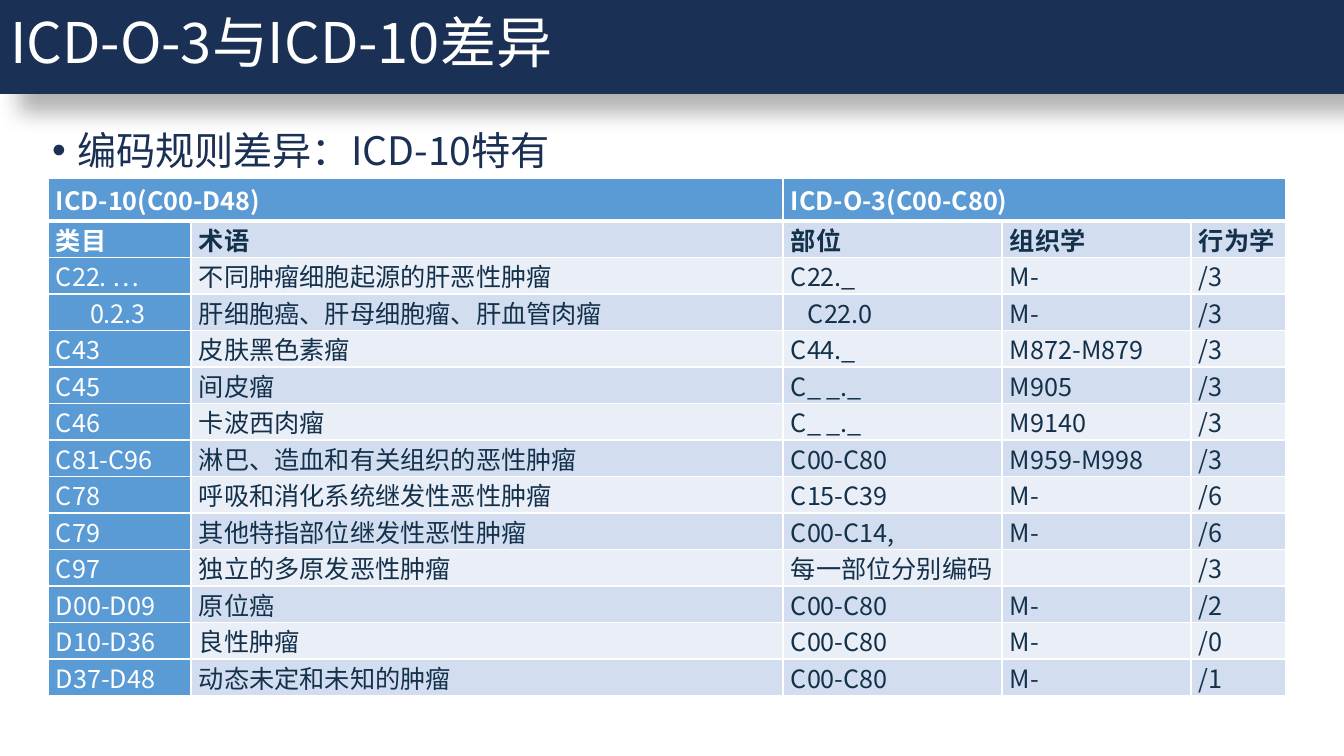
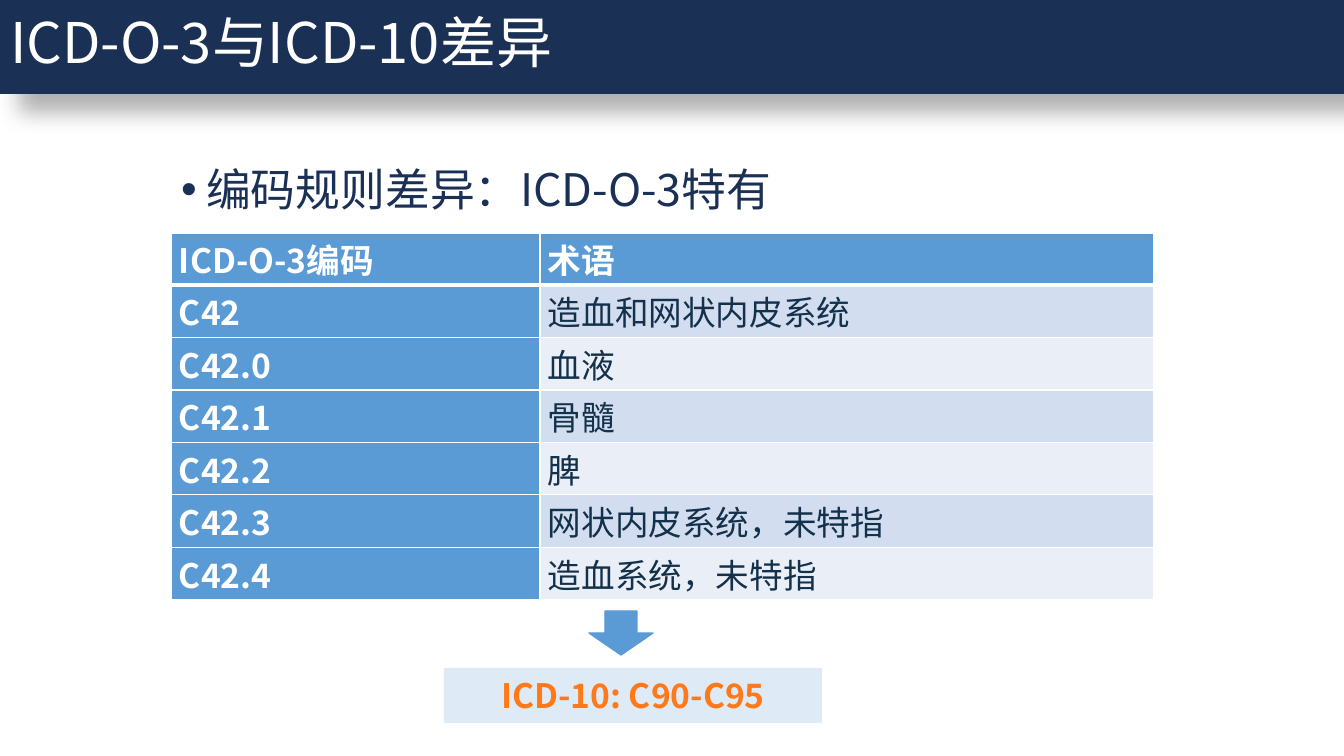
import lxml.etree
import pptx
import pptx.dml.color
import pptx.enum.shapes
import pptx.enum.text
import pptx.oxml
import pptx.oxml.ns
import pptx.util

FONT = "Noto Sans CJK SC"
NAVY = "1B3055"
INK = "14314C"
WHITE = "FFFFFF"
BLUE = "5B9BD5"
PALE_BLUE = "DEEBF7"
ORANGE = "FF7919"
BANDS = ("D2DEEF", "EAEFF7")
SLIDE_WIDTH, SLIDE_HEIGHT = 1344, 756
TITLE = "ICD-O-3与ICD-10差异"

ICD_10_HEADER = (("ICD-10(C00-D48)", 2), ("ICD-O-3(C00-C80)", 3))
ICD_10_ROWS = (
    ("类目", "术语", "部位", "组织学", "行为学"),
    ("C22. …", "不同肿瘤细胞起源的肝恶性肿瘤", "C22._", "M-", "/3"),
    ("0.2.3", "肝细胞癌、肝母细胞瘤、肝血管肉瘤", "C22.0", "M-", "/3"),
    ("C43", "皮肤黑色素瘤", "C44._", "M872-M879", "/3"),
    ("C45", "间皮瘤", "C_ _._", "M905", "/3"),
    ("C46", "卡波西肉瘤", "C_ _._", "M9140", "/3"),
    ("C81-C96", "淋巴、造血和有关组织的恶性肿瘤", "C00-C80", "M959-M998", "/3"),
    ("C78", "呼吸和消化系统继发性恶性肿瘤", "C15-C39", "M-", "/6"),
    ("C79", "其他特指部位继发性恶性肿瘤", "C00-C14,", "M-", "/6"),
    ("C97", "独立的多原发恶性肿瘤", "每一部位分别编码", "", "/3"),
    ("D00-D09", "原位癌", "C00-C80", "M-", "/2"),
    ("D10-D36", "良性肿瘤", "C00-C80", "M-", "/0"),
    ("D37-D48", "动态未定和未知的肿瘤", "C00-C80", "M-", "/1"),
)
ICD_10_INDENTS = {"0.2.3": 34, "C22.0": 17}

ICD_O_HEADER = (("ICD-O-3编码", 1), ("术语", 1))
ICD_O_ROWS = (
    ("C42", "造血和网状内皮系统"),
    ("C42.0", "血液"),
    ("C42.1", "骨髓"),
    ("C42.2", "脾"),
    ("C42.3", "网状内皮系统，未特指"),
    ("C42.4", "造血系统，未特指"),
)


def px(length):
    return pptx.util.Emu(round(length * 914400 / 100.8))


def rgb(color):
    return pptx.dml.color.RGBColor.from_string(color)


def fill_solid(target, color):
    target.fill.solid()
    target.fill.fore_color.rgb = rgb(color)


def place(shape, box):
    shape.left, shape.top, shape.width, shape.height = map(px, box)


def write_text(frame, text, size, color, bold=False, align="LEFT",
               anchor="MIDDLE", line_spacing=1.0, indent=0, hanging=0):
    frame.word_wrap = True
    frame.vertical_anchor = getattr(pptx.enum.text.MSO_ANCHOR, anchor)
    paragraph = frame.paragraphs[0]
    paragraph.alignment = getattr(pptx.enum.text.PP_ALIGN, align)
    paragraph.line_spacing = line_spacing
    paragraph.space_before = pptx.util.Pt(0)
    properties = paragraph._p.get_or_add_pPr()
    properties.set("marL", str(px(indent)))
    properties.set("indent", str(-px(hanging)))
    run = paragraph.add_run()
    run.text = text
    run.font.size = pptx.util.Pt(size)
    run.font.bold = bold
    run.font.color.rgb = rgb(color)
    run.font.name = FONT
    east_asian = lxml.etree.SubElement(run.font._element, pptx.oxml.ns.qn("a:ea"))
    east_asian.set("typeface", FONT)


def add_title_shadow(shape):
    shape._element.spPr.append(pptx.oxml.parse_xml(
        f'<a:effectLst {pptx.oxml.ns.nsdecls("a")}>'
        '<a:outerShdw blurRad="190500" dist="228600" dir="2700000" algn="tl" rotWithShape="0">'
        '<a:srgbClr val="000000"><a:alpha val="30000"/></a:srgbClr>'
        '</a:outerShdw></a:effectLst>'))


def add_titled_slide(presentation, heading, left, top, size):
    """Add a slide with the title band and one bulleted heading."""
    slide = presentation.slides.add_slide(presentation.slide_layouts[1])
    title, body = slide.placeholders
    place(title, (0, -3, SLIDE_WIDTH, 97))
    fill_solid(title, NAVY)
    add_title_shadow(title)
    write_text(title.text_frame, TITLE, 40, WHITE, line_spacing=0.9)
    place(body, (left, top, 882, 608))
    write_text(body.text_frame, heading, size, NAVY, anchor="TOP",
               line_spacing=1.5, indent=25, hanging=25)
    for placeholder in (title, body):
        placeholder.text_frame.auto_size = pptx.enum.text.MSO_AUTO_SIZE.NONE
    return slide


def set_cell_borders(cell, bottom_width):
    properties = cell._tc.get_or_add_tcPr()
    for side, width in (("L", 1), ("R", 1), ("T", 1), ("B", bottom_width)):
        properties.append(pptx.oxml.parse_xml(
            f'<a:ln{side} {pptx.oxml.ns.nsdecls("a")} w="{pptx.util.Pt(width)}">'
            f'<a:solidFill><a:srgbClr val="{WHITE}"/></a:solidFill></a:ln{side}>'))


def format_cell(cell, text, fill, size, color, bold, bottom_width=1, indent=0):
    set_cell_borders(cell, bottom_width)
    fill_solid(cell, fill)
    cell.margin_left = cell.margin_right = px(8)
    cell.margin_top = cell.margin_bottom = 0
    write_text(cell.text_frame, text, size, color, bold, indent=indent)
    cell.vertical_anchor = pptx.enum.text.MSO_ANCHOR.MIDDLE


def add_code_table(slide, box, header, rows, column_widths, header_height, size,
                   bold_codes=False, bold_first_row=False, indents=None):
    """Add a banded table whose header cells are pairs of text and column span."""
    left, top, width, height = map(px, box)
    table = slide.shapes.add_table(
        len(rows) + 1, len(column_widths), left, top, width, height).table
    table.horz_banding = False
    for column, column_width in zip(table.columns, column_widths):
        column.width = px(column_width)
    row_height = (box[3] - header_height) / len(rows)
    for index, row in enumerate(table.rows):
        row.height = px(row_height if index else header_height)

    start = 0
    for text, span in header:
        end = start + span
        cell = table.cell(0, start)
        if span > 1:
            cell.merge(table.cell(0, end - 1))
        format_cell(cell, text, BLUE, size, WHITE, True, bottom_width=3)
        for merged in range(start + 1, end):
            set_cell_borders(table.cell(0, merged), 3)
        start = end

    for row_index, row in enumerate(rows):
        for column_index, text in enumerate(row):
            is_code = column_index == 0
            format_cell(
                table.cell(row_index + 1, column_index), text,
                BLUE if is_code else BANDS[row_index % 2], size,
                WHITE if is_code else INK,
                bold=(is_code and bold_codes) or (row_index == 0 and bold_first_row),
                indent=(indents or {}).get(text, 0))


def add_preset(slide, kind, box, fill, line=None):
    shape = slide.shapes.add_shape(
        getattr(pptx.enum.shapes.MSO_SHAPE, kind), *map(px, box))
    shape.shadow.inherit = False
    fill_solid(shape, fill)
    if line:
        shape.line.color.rgb = rgb(line)
        shape.line.width = pptx.util.Pt(1)
    else:
        shape.line.fill.background()
    return shape


def add_conclusion(slide, left, top, width, text):
    """Add a down arrow and the result box below it."""
    add_preset(slide, "DOWN_ARROW", (left + 145, top, 64, 44), BLUE, line=BLUE)
    result = add_preset(slide, "RECTANGLE", (left, top + 57, width, 55), PALE_BLUE)
    write_text(result.text_frame, text, 24, ORANGE, bold=True, align="CENTER")


def build_icd_10_slide(presentation):
    slide = add_titled_slide(presentation, "编码规则差异：ICD-10特有", 42, 98, 28)
    add_code_table(slide, (48, 178, 1238, 507), ICD_10_HEADER, ICD_10_ROWS,
                   (143, 592, 219, 189, 95), header_height=43, size=18,
                   bold_first_row=True, indents=ICD_10_INDENTS)


def build_icd_o_slide(presentation):
    slide = add_titled_slide(presentation, "编码规则差异：ICD-O-3特有", 171, 130, 32)
    add_code_table(slide, (171, 233, 983, 367), ICD_O_HEADER, ICD_O_ROWS,
                   (369, 614), header_height=52, size=24, bold_codes=True)
    add_conclusion(slide, 444, 611, 378, "ICD-10: C90-C95")


def main():
    presentation = pptx.Presentation()
    presentation.slide_width = px(SLIDE_WIDTH)
    presentation.slide_height = px(SLIDE_HEIGHT)
    build_icd_10_slide(presentation)
    build_icd_o_slide(presentation)
    presentation.save("out.pptx")


if __name__ == "__main__":
    main()
